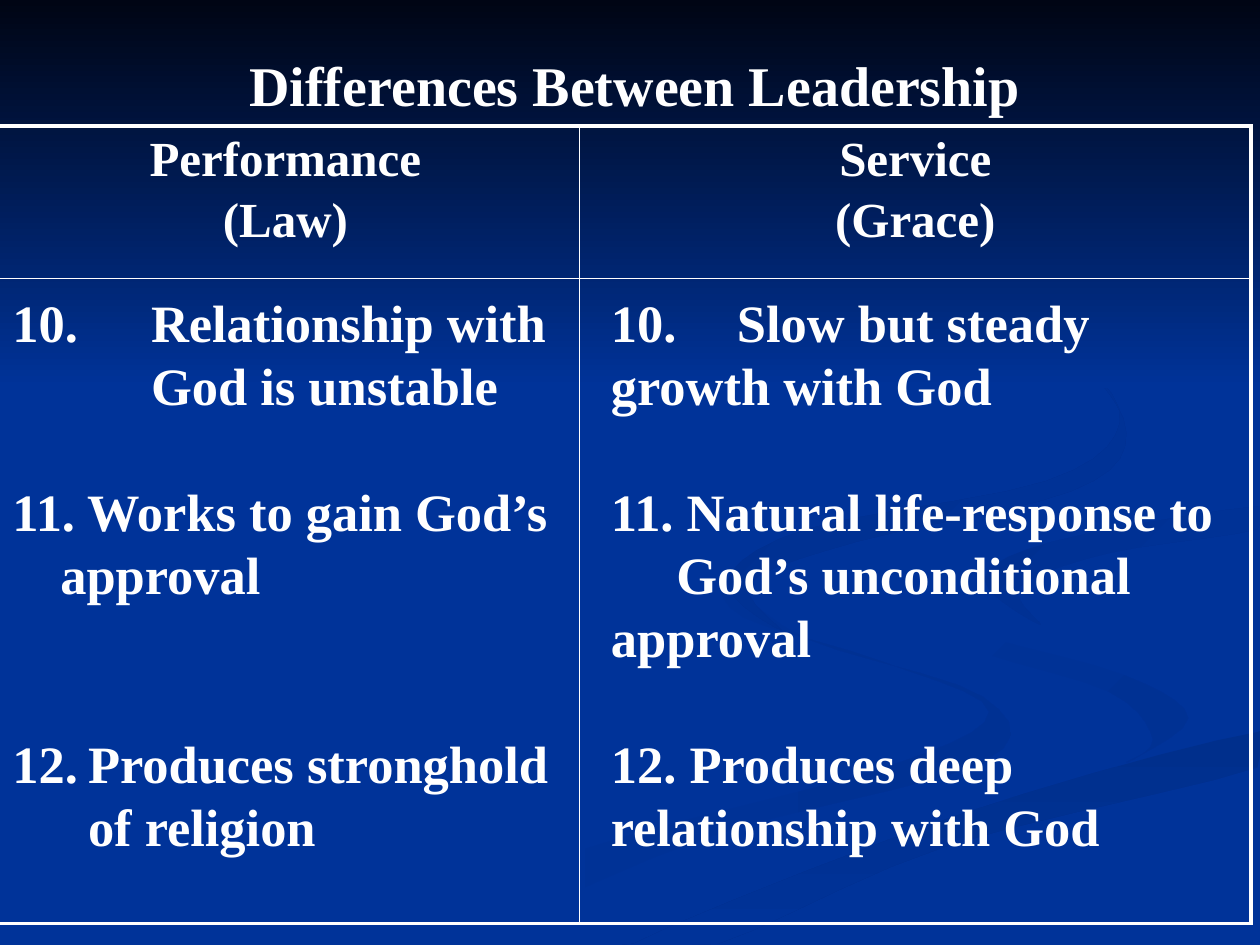
from dataclasses import dataclass

import pptx
import pptx.dml.color
import pptx.enum.shapes
import pptx.enum.text
import pptx.oxml.ns
import pptx.util
from lxml import etree

Inches, Pt = pptx.util.Inches, pptx.util.Pt
PP_ALIGN = pptx.enum.text.PP_ALIGN
FONT, WHITE, BLUE = "Times New Roman", "FFFFFF", "003399"
THIN, THICK = 1, 2.25
WIDTH, HEIGHT = 10, 7.5
CURVE_STEPS = 5


@dataclass
class Ribbon:
    """A closed curve through a few knots, in inches, with a two-stop gradient."""
    knots: list[tuple[float, float]]
    start: str = BLUE
    end: str = BLUE
    angle: int = 0


@dataclass
class Item:
    text: str
    number: int = 0
    margin: float = 0
    indent: float = 0
    tab: float = 0
    before: float = 36


RIBBONS = [
    Ribbon([(5.75, 4.6), (5.9, 4.9), (7, 5.25), (7.85, 5.65), (7, 6.1), (4.6, 6.75),
            (3, 7.49), (3.6, 7.49), (5.6, 6.65), (7.8, 6.05), (7.8, 5.53),
            (6.4, 5.07)], BLUE, "003193"),
    Ribbon([(7.24, 4.64), (7.6, 5.1), (8.8, 5.49), (9.15, 5.87), (8.94, 6.05),
            (9.43, 5.7), (8.9, 5.35), (7.6, 4.98)], BLUE, "003193", 45),
    Ribbon([(5.03, 7.49), (5.7, 7.49), (7.5, 6.72), (9.98, 6.09), (9.98, 5.81),
            (7.6, 6.47)], "002F8C", BLUE, 90),
    Ribbon([(5.77, 4.62), (6.2, 5), (5.95, 4.63), (6.8, 4.3), (8.5, 3.9), (8.94, 3.44),
            (8.5, 2.8), (7.62, 2.33), (8.5, 2.8), (8.89, 3.35), (8.3, 3.82),
            (6.4, 4.2)], "002F8E", BLUE, 45),
    Ribbon([(7.81, 4.6), (8.26, 4.96), (8.09, 4.66), (8.8, 4.39), (9.98, 4.2),
            (9.98, 4.02), (8.35, 4.3)], "003091", BLUE, 45),
]

LEFT_ITEMS = [
    Item("10.\tRelationship with God is unstable", margin=1.1, indent=-1.1,
         tab=1.1, before=0),
    Item(" Works to gain God’s approval", 11, 0.38, -0.38),
    Item("Produces stronghold of religion", 12, 0.6, -0.6, before=72),
]
RIGHT_ITEMS = [
    Item("10.\tSlow but steady growth with God", tab=0.66, before=0),
    Item(" Natural life-response to", 11),
    Item("God’s unconditional approval", indent=0.52, before=0),
    Item(" Produces deep relationship with God", 12),
]
HEADINGS = [("Performance", "(Law)"), ("Service", "(Grace)")]


def color(value: str) -> pptx.dml.color.RGBColor:
    return pptx.dml.color.RGBColor.from_string(value)


def add_run(p, text: str, size: float) -> None:
    r = p.add_run()
    r.text = text
    r.font.name, r.font.size, r.font.bold = FONT, Pt(size), True
    r.font.color.rgb = color(WHITE)


def sub(parent, tag: str, **attributes: str):
    return etree.SubElement(parent, pptx.oxml.ns.qn(tag), attributes)


def spline(a: float, b: float, c: float, d: float, t: float) -> float:
    """Catmull-Rom value between b and c."""
    return b + t / 2 * (c - a + t * (2 * a - 5 * b + 4 * c - d
                                     + t * (3 * (b - c) + d - a)))


def smooth(knots: list[tuple[float, float]]) -> list[tuple[int, int]]:
    """Points of the closed curve through the knots, kept on the slide."""
    points = []
    for i in range(len(knots)):
        near = [knots[(i + k) % len(knots)] for k in (-1, 0, 1, 2)]
        xs, ys = zip(*near)
        for step in range(CURVE_STEPS):
            t = step / CURVE_STEPS
            points.append((Inches(min(spline(*xs, t), WIDTH)),
                           Inches(min(spline(*ys, t), HEIGHT))))
    return points


def paint(sp, start: str, end: str, angle: int) -> None:
    sp.shadow.inherit = False
    sp.line.fill.background()
    sp.fill.gradient()
    sp.fill.gradient_angle = -angle % 360
    for stop, value in zip(sp.fill.gradient_stops, (start, end)):
        stop.color.rgb = color(value)


def draw_ribbon(s, ribbon: Ribbon) -> None:
    first, *rest = smooth(ribbon.knots)
    builder = s.shapes.build_freeform(*first)
    builder.add_line_segments(rest, close=True)
    paint(builder.convert_to_shape(), ribbon.start, ribbon.end, ribbon.angle)


def add_text_box(s, left: float, top: float, width: float, height: float):
    sp = s.shapes.add_textbox(Inches(left), Inches(top), Inches(width), Inches(height))
    sp.text_frame.word_wrap = True
    return sp.text_frame


def draw_items(s, left: float, width: float, items: list[Item]) -> None:
    tf = add_text_box(s, left, 2.25, width, 4.64)
    for i, item in enumerate(items):
        p = tf.add_paragraph() if i else tf.paragraphs[0]
        p.line_spacing, p.space_before = Pt(36), Pt(item.before)
        pPr = p._p.get_or_add_pPr()
        pPr.set("marL", str(Inches(item.margin)))
        pPr.set("indent", str(Inches(item.indent)))
        if item.number:
            sub(pPr, "a:buFont", typeface=FONT)
            sub(pPr, "a:buAutoNum", type="arabicPeriod", startAt=str(item.number))
        if item.tab:
            sub(sub(pPr, "a:tabLst"), "a:tab", pos=str(Inches(item.tab)), algn="l")
        add_run(p, item.text, 30)


def set_borders(cell, **widths: float) -> None:
    """Draw white borders; sides are given in schema order L, R, T, B."""
    tcPr = cell._tc.get_or_add_tcPr()
    for side, width in widths.items():
        ln = sub(tcPr, f"a:ln{side}", w=str(Pt(width)))
        sub(sub(ln, "a:solidFill"), "a:srgbClr", val=WHITE)


def draw_table(s) -> None:
    table = s.shapes.add_table(2, 2, Inches(-0.07), Inches(1), Inches(10),
                               Inches(6.33)).table
    table.first_row = table.horz_banding = False
    for column, width in zip(table.columns, (4.67, 5.33)):
        column.width = Inches(width)
    for row, height in zip(table.rows, (1.21, 5.12)):
        row.height = Inches(height)
    for i, row in enumerate(table.rows):
        for j, cell in enumerate(row.cells):
            set_borders(cell, L=THIN if j else THICK, R=THICK if j else THIN,
                        T=THIN if i else THICK, B=THICK if i else THIN)
            cell.fill.background()
    for cell, lines in zip(table.rows[0].cells, HEADINGS):
        tf = cell.text_frame
        for i, line in enumerate(lines):
            p = tf.add_paragraph() if i else tf.paragraphs[0]
            p.alignment, p.space_before = PP_ALIGN.CENTER, Pt(4)
            add_run(p, line, 28)


def main() -> None:
    prs = pptx.Presentation()
    prs.slide_width, prs.slide_height = Inches(WIDTH), Inches(HEIGHT)
    s = prs.slides.add_slide(prs.slide_layouts[6])
    s.background.fill.solid()
    s.background.fill.fore_color.rgb = color(BLUE)
    for ribbon in RIBBONS:
        draw_ribbon(s, ribbon)
    band = s.shapes.add_shape(pptx.enum.shapes.MSO_SHAPE.RECTANGLE, 0, 0,
                              prs.slide_width, Inches(3.08))
    paint(band, "000514", BLUE, 90)
    tf = add_text_box(s, 0.08, 0.08, 9.92, 1.17)
    tf.vertical_anchor = pptx.enum.text.MSO_ANCHOR.MIDDLE
    tf.paragraphs[0].alignment = PP_ALIGN.CENTER
    add_run(tf.paragraphs[0], "Differences Between Leadership", 32)
    draw_table(s)
    draw_items(s, 0, 4.58, LEFT_ITEMS)
    draw_items(s, 4.75, 5.25, RIGHT_ITEMS)
    prs.save("out.pptx")


if __name__ == "__main__":
    main()
